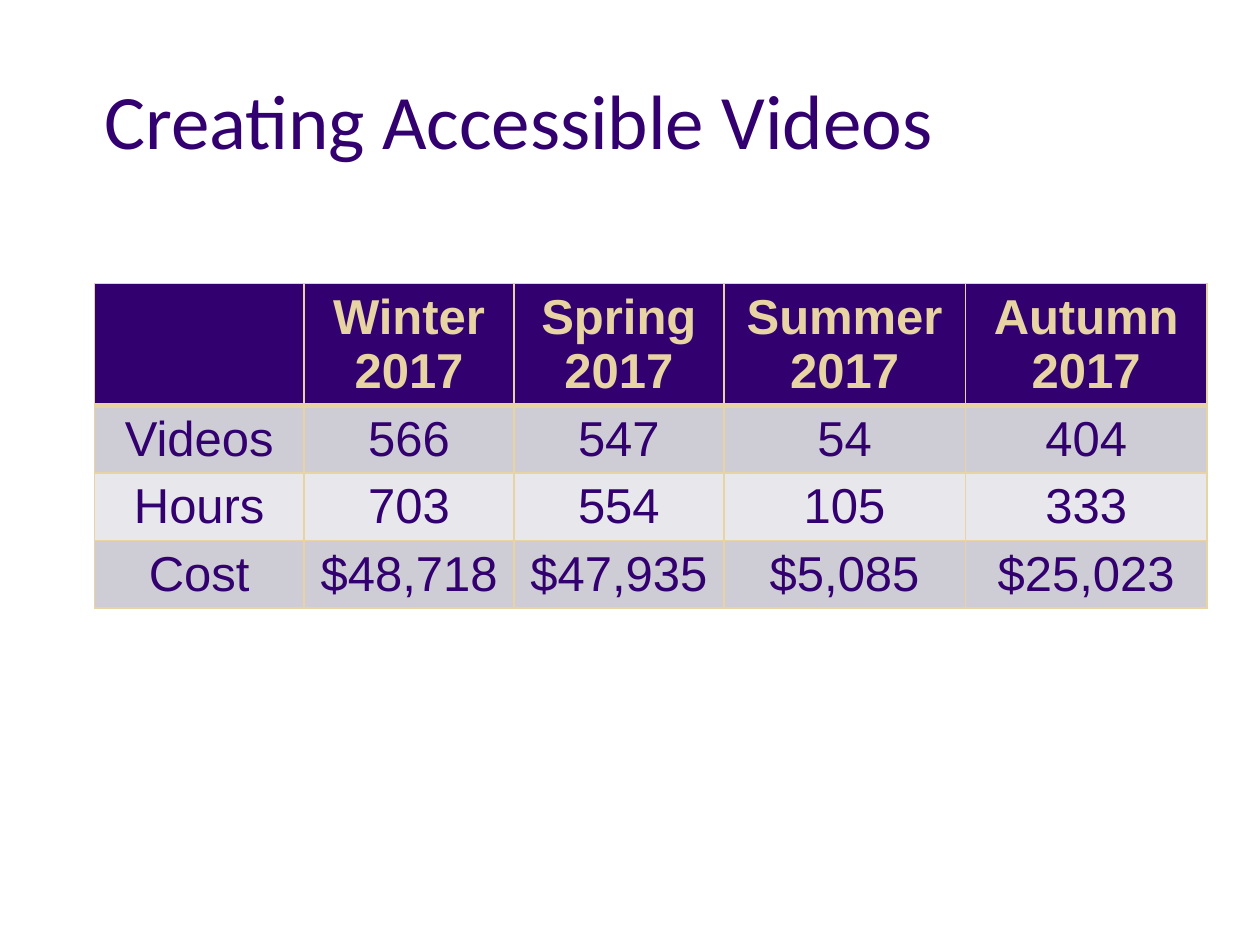
from dataclasses import dataclass

from lxml import etree
from pptx import Presentation
from pptx.dml.color import RGBColor
from pptx.enum.text import MSO_ANCHOR, PP_ALIGN
from pptx.oxml.ns import qn
from pptx.util import Cm, Pt

TOP = MSO_ANCHOR.TOP
LEFT, CENTER = PP_ALIGN.LEFT, PP_ALIGN.CENTER
PURPLE, GOLD = "33006F", "E8D3A2"
DARK_BAND, LIGHT_BAND = "CECCD5", "E8E7EB"
COL_WIDTHS = (4.23, 4.23, 4.23, 4.87, 4.87)


@dataclass
class Row:
    texts: tuple[str, ...]
    height: float
    fill: str
    color: str = PURPLE
    bold: bool = False
    top: float = 1
    bottom: float = 1


ROWS = (
    Row(("", "Winter 2017", "Spring 2017", "Summer 2017", "Autumn 2017"),
        2.46, PURPLE, GOLD, True, bottom=3),
    Row(("Videos", "566", "547", "54", "404"), 1.36, DARK_BAND, top=3),
    Row(("Hours", "703", "554", "105", "333"), 1.36, LIGHT_BAND),
    Row(("Cost", "$48,718", "$47,935", "$5,085", "$25,023"), 1.36, DARK_BAND),
)


def rgb(value: str) -> RGBColor:
    return RGBColor.from_string(value)


def write(tf, text: str, align, color: str, **formats) -> None:
    p = tf.paragraphs[0]
    p.alignment = align
    r = p.add_run()
    r.text = text
    r.font.color.rgb = rgb(color)
    for name, value in formats.items():
        setattr(r.font, name, value)


def set_borders(cell, row: Row) -> None:
    tcPr = cell._tc.get_or_add_tcPr()
    widths = {"a:lnL": 1, "a:lnR": 1, "a:lnT": row.top, "a:lnB": row.bottom}
    for tag, width in widths.items():
        ln = etree.SubElement(tcPr, qn(tag), w=str(Pt(width)))
        fill = etree.SubElement(ln, qn("a:solidFill"))
        etree.SubElement(fill, qn("a:srgbClr"), val=GOLD)


def add_title(s, text: str) -> None:
    tf = s.shapes.add_textbox(Cm(1.9), Cm(1.27), Cm(22.86), Cm(1.9)).text_frame
    formats = {"word_wrap": True, "vertical_anchor": TOP,
               "margin_left": Cm(0.2), "margin_top": Cm(0.2)}
    for name, value in formats.items():
        setattr(tf, name, value)
    write(tf, text, LEFT, PURPLE, name="Calibri", size=Pt(44))


def add_video_table(s) -> None:
    height = sum(row.height for row in ROWS)
    table = s.shapes.add_table(len(ROWS), len(COL_WIDTHS), Cm(1.9), Cm(5.72),
                               Cm(sum(COL_WIDTHS)), Cm(height)).table
    for column, width in zip(table.columns, COL_WIDTHS):
        column.width = Cm(width)
    for i, row in enumerate(ROWS):
        table.rows[i].height = Cm(row.height)
        for j, text in enumerate(row.texts):
            cell = table.cell(i, j)
            set_borders(cell, row)
            cell.fill.solid()
            cell.fill.fore_color.rgb = rgb(row.fill)
            if text:
                write(cell.text_frame, text, CENTER, row.color,
                      name="Arial", size=Pt(28), bold=row.bold)


def main() -> None:
    prs = Presentation()
    prs.slide_width, prs.slide_height = Cm(25.4), Cm(19.05)
    s = prs.slides.add_slide(prs.slide_layouts[6])
    add_video_table(s)
    add_title(s, "Creating Accessible Videos")
    prs.save("out.pptx")


if __name__ == "__main__":
    main()
